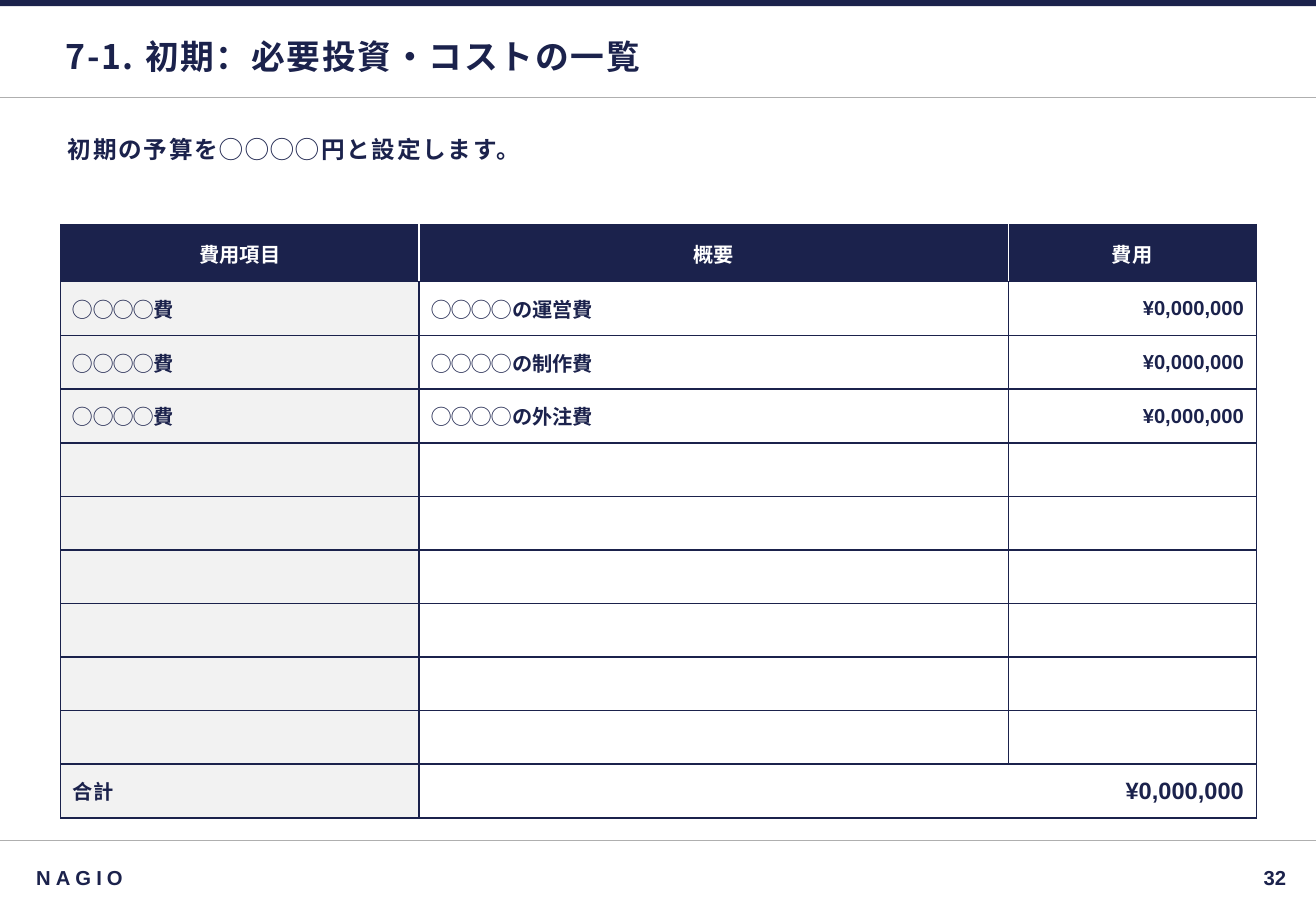
from lxml.etree import SubElement
from pptx import Presentation
from pptx.dml.color import RGBColor
from pptx.enum.shapes import MSO_CONNECTOR, MSO_SHAPE
from pptx.enum.text import MSO_ANCHOR as Anchor, MSO_AUTO_SIZE as AutoSize, PP_ALIGN as Align
from pptx.oxml.ns import qn
from pptx.util import Pt

NAVY = RGBColor(0x1B, 0x22, 0x4C)
GRAY = RGBColor(0xAF, 0xAF, 0xAF)
PALE = RGBColor(0xF2, 0xF2, 0xF2)
WHITE = RGBColor(0xFF, 0xFF, 0xFF)
LATIN, JAPANESE = "Arial", "Noto Sans CJK JP"

SLIDE_WIDTH, SLIDE_HEIGHT = 780, 540
TABLE_LEFT, TABLE_TOP = 36, 133.2
COLUMN_WIDTHS = (212.4, 349.2, 147)
HEADER_HEIGHT, ROW_HEIGHT = 33.8, 31.75
BLANK_ROWS = 6
AMOUNT = "¥0,000,000"

HEADERS = ("費用項目", "概要", "費用")
COSTS = [("◯◯◯◯費", f"◯◯◯◯の{kind}費", AMOUNT) for kind in ("運営", "制作", "外注")]
TOTAL = ("合計", AMOUNT, "")


def set_attributes(target, values):
    for name, value in values.items():
        setattr(target, name, value)


def write_text(frame, text, size, color=NAVY, font=LATIN, align=Align.LEFT, spacing=0):
    """Put one bold line of text in a text frame; spacing is in points."""
    paragraph = frame.paragraphs[0]
    paragraph.alignment = align
    run = paragraph.add_run()
    run.text = text
    set_attributes(run.font, {"name": font, "size": Pt(size), "bold": True})
    run.font.color.rgb = color
    properties = run.font._element
    SubElement(properties, qn("a:ea")).set("typeface", JAPANESE)
    if spacing:
        properties.set("spc", str(spacing * 100))


def format_frame(frame, anchor, inset=2.88, side=2.88):
    set_attributes(frame, {
        "word_wrap": True, "auto_size": AutoSize.NONE, "vertical_anchor": anchor,
        "margin_left": Pt(side), "margin_right": Pt(side),
        "margin_top": Pt(inset), "margin_bottom": Pt(inset),
    })


def add_text(slide, box, text, size, anchor=Anchor.MIDDLE, side=2.88, **style):
    shape = slide.shapes.add_textbox(*map(Pt, box))
    format_frame(shape.text_frame, anchor, side=side)
    write_text(shape.text_frame, text, size, **style)
    return shape


def add_title(slide, text):
    title = slide.shapes.title
    set_attributes(title, {"left": Pt(36), "top": Pt(15.1),
                           "width": Pt(708.5), "height": Pt(36.7)})
    format_frame(title.text_frame, Anchor.MIDDLE)
    write_text(title.text_frame, text, 20, font=JAPANESE, spacing=1)


def add_rule(slide, y):
    line = slide.shapes.add_connector(
        MSO_CONNECTOR.STRAIGHT, Pt(0), Pt(y), Pt(SLIDE_WIDTH), Pt(y))
    line.line.color.rgb = GRAY
    line.line.width = Pt(0.75)
    SubElement(line._element.spPr, qn("a:effectLst"))


def add_top_band(slide):
    band = slide.shapes.add_shape(
        MSO_SHAPE.RECTANGLE, Pt(0), Pt(0), Pt(SLIDE_WIDTH), Pt(3.6))
    band.shadow.inherit = False
    band.fill.solid()
    band.fill.fore_color.rgb = NAVY
    band.line.fill.background()


def set_borders(cell, left=NAVY, right=NAVY):
    properties = cell._tc.get_or_add_tcPr()
    for side, color in (("L", left), ("R", right), ("T", NAVY), ("B", NAVY)):
        border = SubElement(properties, qn(f"a:ln{side}"), w=str(Pt(1)))
        fill = SubElement(border, qn("a:solidFill"))
        SubElement(fill, qn("a:srgbClr"), val=str(color))


def format_cell(cell, fill, **borders):
    set_borders(cell, **borders)
    cell.fill.solid()
    cell.fill.fore_color.rgb = fill
    inset = Pt(7.2)
    set_attributes(cell, {
        "vertical_anchor": Anchor.MIDDLE, "margin_left": inset, "margin_right": inset,
        "margin_top": inset, "margin_bottom": inset,
    })


def add_cost_table(slide):
    rows = [HEADERS, *COSTS, *[("", "", "")] * BLANK_ROWS, TOTAL]
    last_row, last_column = len(rows) - 1, len(HEADERS) - 1
    heights = [HEADER_HEIGHT] + [ROW_HEIGHT] * last_row
    table = slide.shapes.add_table(
        len(rows), len(HEADERS), Pt(TABLE_LEFT), Pt(TABLE_TOP),
        Pt(sum(COLUMN_WIDTHS)), Pt(sum(heights))).table
    set_attributes(table, {"first_row": False, "horz_banding": False})
    for column, width in zip(table.columns, COLUMN_WIDTHS):
        column.width = Pt(width)
    for row, height in zip(table.rows, heights):
        row.height = Pt(height)

    for r, texts in enumerate(rows):
        for c, text in enumerate(texts):
            cell = table.cell(r, c)
            size, color, align = 12, NAVY, Align.LEFT
            if r == 0:
                # White dividers between the header cells
                format_cell(cell, NAVY, left=WHITE if c else NAVY,
                            right=WHITE if c < last_column else NAVY)
                color, align = WHITE, Align.CENTER
            else:
                format_cell(cell, WHITE if c else PALE)
                if text == AMOUNT:
                    align = Align.RIGHT
                    size = 14 if r == last_row else 12
            if text:
                write_text(cell.text_frame, text, size, color=color, align=align)
            else:
                cell.text_frame.paragraphs[0].font.size = Pt(12)
    table.cell(last_row, 1).merge(table.cell(last_row, last_column))


def main():
    presentation = Presentation()
    set_attributes(presentation, {"slide_width": Pt(SLIDE_WIDTH),
                                  "slide_height": Pt(SLIDE_HEIGHT)})
    slide = presentation.slides.add_slide(presentation.slide_layouts[5])

    # Frame of the page
    for y in (498.2, 57.6):
        add_rule(slide, y)
    add_top_band(slide)

    # Heading and lead
    add_title(slide, "7-1. 初期：必要投資・コストの一覧")
    lead = add_text(slide, (37.4, 77, 708.5, 56.9), "初期の予算を◯◯◯◯円と設定します。",
                    14, anchor=Anchor.TOP, spacing=1)
    lead.text_frame.paragraphs[0].space_after = Pt(6)

    # Cost list
    add_cost_table(slide)

    # Footer
    add_text(slide, (14.4, 509, 623.5, 22.3), "NAGIO", 12, side=7.2, spacing=3)
    add_text(slide, (652.3, 509, 113, 22.3), "32", 12, align=Align.RIGHT)

    presentation.save("out.pptx")


if __name__ == "__main__":
    main()
